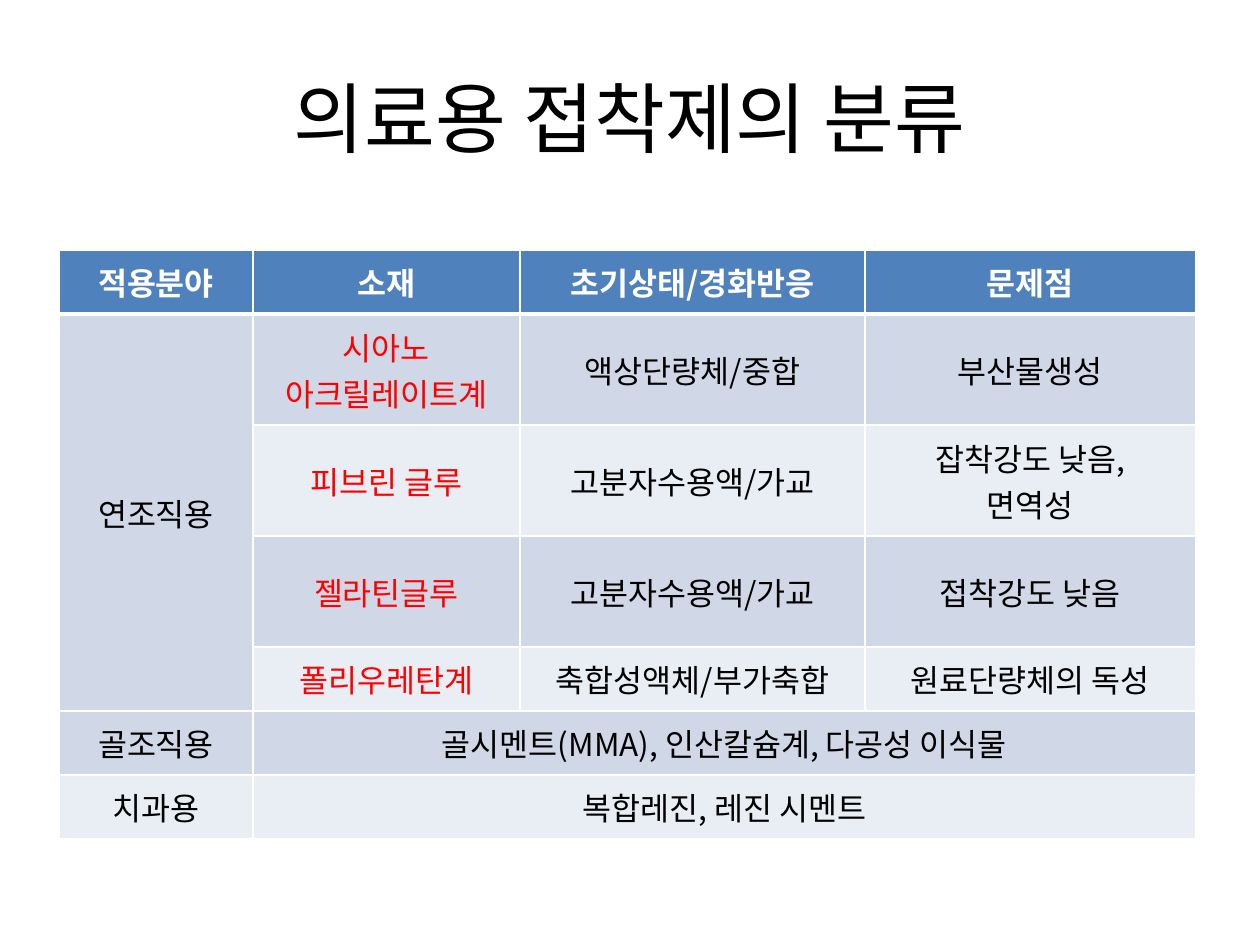
from lxml.etree import SubElement as Sub
from pptx import Presentation
from pptx.dml.color import RGBColor
from pptx.enum.text import MSO_ANCHOR as Anchor, PP_ALIGN as Align
from pptx.oxml.ns import qn
from pptx.util import Pt

FONT = "Noto Sans CJK KR"
WHITE, BLACK, RED = "FFFFFF", "000000", "FF0000"
HEAD, BANDS = "4F81BD", ("D0D8E8", "E9EDF4")

TITLE = "의료용 접착제의 분류"
ROWS = [
    ["적용분야", "소재", "초기상태/경화반응", "문제점"],
    ["연조직용", "시아노\n아크릴레이트계", "액상단량체/중합", "부산물생성"],
    ["", "피브린 글루", "고분자수용액/가교", "잡착강도 낮음,\n면역성"],
    ["", "젤라틴글루", "고분자수용액/가교", "접착강도 낮음"],
    ["", "폴리우레탄계", "축합성액체/부가축합", "원료단량체의 독성"],
    ["골조직용", "골시멘트(MMA), 인산칼슘계, 다공성 이식물", "", ""],
    ["치과용", "복합레진, 레진 시멘트", "", ""],
]
MERGES = [((1, 0), (4, 0)), ((5, 1), (5, 3)), ((6, 1), (6, 3))]
WIDTHS = [194, 267, 345, 331]
HEIGHTS = [64, 111, 111, 111, 64, 64, 64]


def px(n):
    return n * 914400 // 126


def color(code):
    return RGBColor.from_string(code)


def style(frame, size, code, bold=False):
    for para in frame.paragraphs:
        para.alignment = Align.CENTER
        font = para.font
        font.size, font.bold, font.name = Pt(size), bold, FONT
        font.color.rgb = color(code)
        # Korean text takes the East Asian face
        props = para._p.pPr.find(qn("a:defRPr"))
        Sub(props, qn("a:ea"), typeface=FONT)


def border(cell, row):
    """White rules, thick between the header and the body."""
    props = cell._tc.get_or_add_tcPr()
    thick = {(0, "B"), (1, "T")}
    for side in "LRTB":
        width = Pt(3 if (row, side) in thick else 1)
        line = Sub(props, qn("a:ln" + side), w=str(width))
        fill = Sub(line, qn("a:solidFill"))
        Sub(fill, qn("a:srgbClr"), val=WHITE)


def fill_cell(cell, row, col, text):
    cell.text = text
    cell.vertical_anchor = Anchor.MIDDLE
    border(cell, row)
    cell.fill.solid()
    cell.fill.fore_color.rgb = color(BANDS[(row - 1) % 2] if row else HEAD)
    ink = WHITE if row == 0 else RED if col == 1 and row < 5 else BLACK
    style(cell.text_frame, 18, ink, row == 0)


def main():
    deck = Presentation()
    deck.slide_width, deck.slide_height = px(1260), px(945)
    slide = deck.slides.add_slide(deck.slide_layouts[5])

    title = slide.shapes.title
    title.left, title.top, title.width, title.height = map(px, (63, 38, 1134, 157))
    title.text_frame.text = TITLE
    title.text_frame.vertical_anchor = Anchor.MIDDLE
    style(title.text_frame, 44, BLACK)

    box = map(px, (59, 250, sum(WIDTHS), sum(HEIGHTS)))
    table = slide.shapes.add_table(len(ROWS), len(WIDTHS), *box).table
    for col, width in zip(table.columns, WIDTHS):
        col.width = px(width)
    for row, height in zip(table.rows, HEIGHTS):
        row.height = px(height)
    for r, texts in enumerate(ROWS):
        for c, text in enumerate(texts):
            fill_cell(table.cell(r, c), r, c, text)
    for first, last in MERGES:
        table.cell(*first).merge(table.cell(*last))

    deck.save("out.pptx")


if __name__ == "__main__":
    main()
